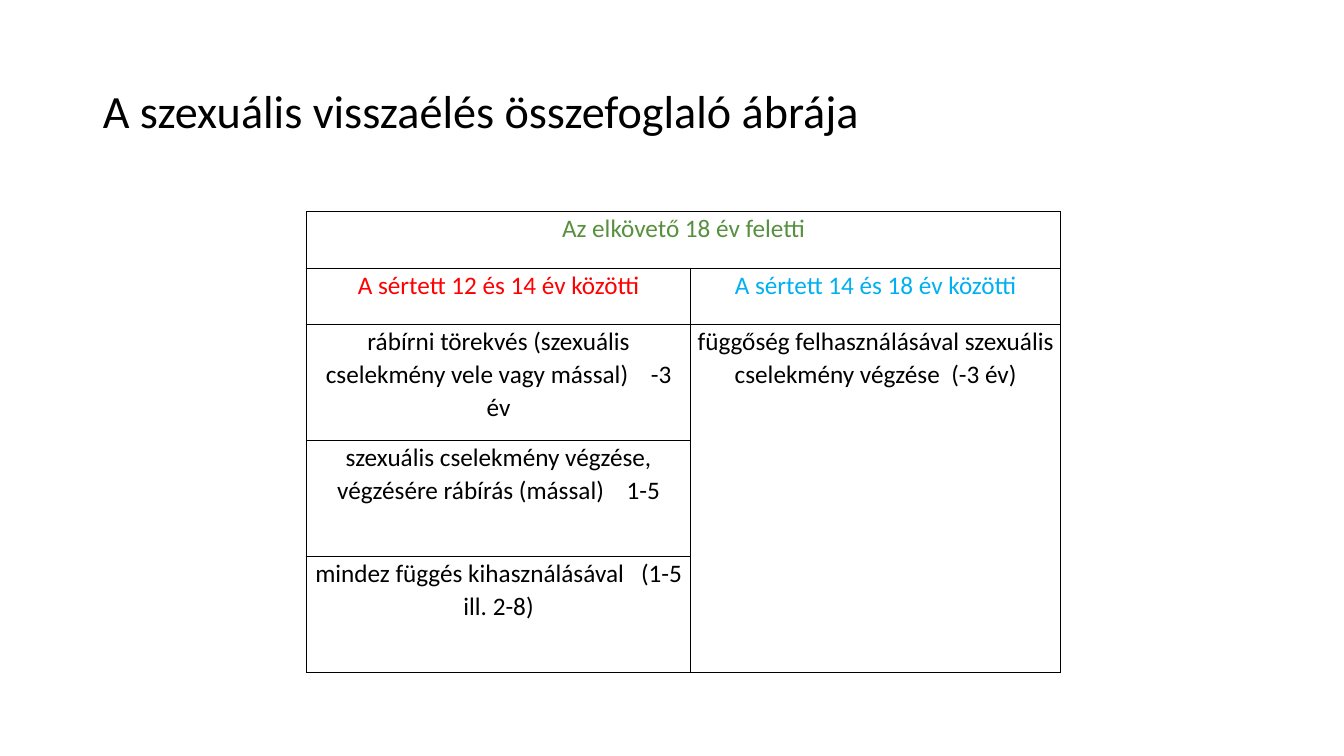
from lxml.etree import SubElement
from pptx import Presentation
from pptx.dml.color import RGBColor
from pptx.enum.text import MSO_ANCHOR as Anchor, PP_ALIGN as Align
from pptx.oxml.ns import qn
from pptx.util import Inches, Pt

BLACK = RGBColor(0x00, 0x00, 0x00)
GREEN = RGBColor(0x57, 0x90, 0x3F)
RED = RGBColor(0xFF, 0x00, 0x00)
BLUE = RGBColor(0x00, 0xB0, 0xF0)
FONT = "Calibri"

TITLE = "A szexuális visszaélés összefoglaló ábrája"
COLUMN_WIDTHS = [3.81, 3.67]
ROW_HEIGHTS = [0.56, 0.56, 1.15, 1.15, 1.15]
MERGES = [((0, 0), (0, 1)), ((2, 1), (4, 1))]
SPACE_WIDTH = 4
CELLS = {
    (0, 0): (GREEN, "Az elkövető 18 év feletti", 0, ""),
    (1, 0): (RED, "A sértett 12 és 14 év közötti", 0, ""),
    (1, 1): (BLUE, "A sértett 14 és 18 év közötti", 0, ""),
    (2, 0): (BLACK, "rábírni törekvés (szexuális cselekmény vele vagy mással)", 4, "-3 év"),
    (2, 1): (BLACK, "függőség felhasználásával szexuális cselekmény végzése", 2, "(-3 év)"),
    (3, 0): (BLACK, "szexuális cselekmény végzése, végzésére rábírás (mással)", 4, "1-5"),
    (4, 0): (BLACK, "mindez függés kihasználásával", 3, "(1-5 ill. 2-8)"),
}


def add_span(para, text, size, color):
    """Add one formatted run to a paragraph."""
    span = para.add_run()
    span.text = text
    span.font.name = FONT
    span.font.size = Pt(size)
    span.font.bold = False
    span.font.color.rgb = color
    return span


def place_title(page, left, top, width, height):
    """Put the heading in the title placeholder."""
    title = page.shapes.title
    title.left, title.top = Inches(left), Inches(top)
    title.width, title.height = Inches(width), Inches(height)
    frame = title.text_frame
    frame.word_wrap = True
    frame.vertical_anchor = Anchor.MIDDLE
    para = frame.paragraphs[0]
    para.alignment = Align.LEFT
    para.line_spacing = 0.9
    add_span(para, TITLE, 33, BLACK)


def frame_cell(cell):
    """Give a cell thin black borders, no fill and narrow margins."""
    properties = cell._tc.get_or_add_tcPr()
    for side in ("a:lnL", "a:lnR", "a:lnT", "a:lnB"):
        line = SubElement(properties, qn(side), w=str(Pt(1)))
        fill = SubElement(line, qn("a:solidFill"))
        SubElement(fill, qn("a:srgbClr"), val=str(BLACK))
    cell.fill.background()
    cell.margin_left = cell.margin_right = Inches(0.06)
    cell.margin_top = cell.margin_bottom = 0
    cell.vertical_anchor = Anchor.TOP


def write_cell(cell, color, text, gap, penalty):
    """Write centred text, with a widened space before the penalty."""
    para = cell.text_frame.paragraphs[0]
    para.alignment = Align.CENTER
    para.line_spacing = 1.07
    para.space_after = Pt(8)
    add_span(para, text, 18, color)
    if penalty:
        space = add_span(para, " ", 18, color)
        tracking = (gap - 1) * SPACE_WIDTH * 100
        space._r.get_or_add_rPr().set("spc", str(tracking))
        add_span(para, penalty, 18, color)


def place_table(page, left, top):
    """Build the summary table with its top left corner at the given point."""
    table = page.shapes.add_table(
        len(ROW_HEIGHTS), len(COLUMN_WIDTHS), Inches(left), Inches(top),
        Inches(sum(COLUMN_WIDTHS)), Inches(sum(ROW_HEIGHTS))).table
    table.first_row = table.horz_banding = False
    for column, width in zip(table.columns, COLUMN_WIDTHS):
        column.width = Inches(width)
    for row, height in zip(table.rows, ROW_HEIGHTS):
        row.height = Inches(height)
    for cell in table.iter_cells():
        frame_cell(cell)
    for first, last in MERGES:
        table.cell(*first).merge(table.cell(*last))
    for position, content in CELLS.items():
        write_cell(table.cell(*position), *content)


def main():
    """Build and save the one-page deck."""
    deck = Presentation()
    deck.slide_width, deck.slide_height = Inches(13.33), Inches(7.5)
    page = deck.slides.add_slide(deck.slide_layouts[5])
    place_title(page, 0.92, 0.4, 11.5, 1.45)
    place_table(page, 3.04, 2.1)
    deck.save("out.pptx")


if __name__ == "__main__":
    main()
